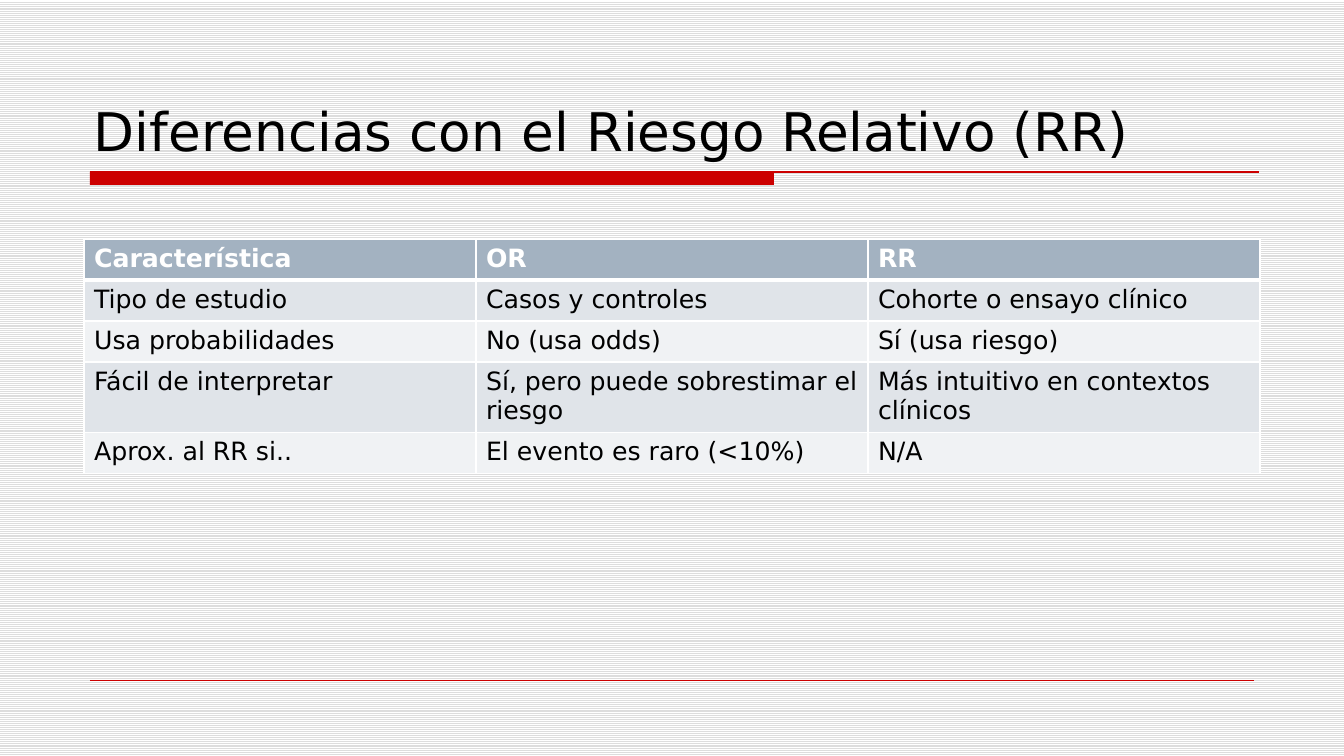
from lxml import etree
from pptx import Presentation, util as u
from pptx.dml.color import RGBColor
from pptx.enum import dml, shapes, text
from pptx.oxml import ns

PX = 914400 / 100.8  # EMU in one px
FONT = "DejaVu Sans"
BLACK = RGBColor(0x00, 0x00, 0x00)
WHITE = RGBColor(0xFF, 0xFF, 0xFF)
RED = RGBColor(0xCC, 0x00, 0x00)
STRIPE = RGBColor(0xDD, 0xDD, 0xDD)
HEADER = RGBColor(0xA3, 0xB2, 0xC1)
BANDS = [RGBColor(0xE0, 0xE4, 0xE9), RGBColor(0xF0, 0xF2, 0xF4)]

TITLE_FORMAT = {"name": FONT, "size": u.Pt(38)}
HEAD_FORMAT = {"name": FONT, "size": u.Pt(18), "bold": True}
BODY_FORMAT = {"name": FONT, "size": u.Pt(18), "bold": False}

ROWS = [
    ["Característica", "OR", "RR"],
    ["Tipo de estudio", "Casos y controles", "Cohorte o ensayo clínico"],
    ["Usa probabilidades", "No (usa odds)", "Sí (usa riesgo)"],
    ["Fácil de interpretar", "Sí, pero puede sobrestimar el riesgo",
     "Más intuitivo en contextos clínicos"],
    ["Aprox. al RR si..", "El evento es raro (<10%)", "N/A"],
]


def px(*values):
    return [u.Emu(round(v * PX)) for v in values]


def write(tf, content, color, formats):
    r = tf.paragraphs[0].add_run()
    r.text = content
    for name, value in formats.items():
        setattr(r.font, name, value)
    r.font.color.rgb = color


def set_background(s):
    fill = s.background.fill
    fill.patterned()
    fill.pattern = dml.MSO_PATTERN.LIGHT_HORIZONTAL
    fill.fore_color.rgb = STRIPE
    fill.back_color.rgb = WHITE


def add_title(s, content, *box):
    tf = s.shapes.add_textbox(*px(*box)).text_frame
    tf.word_wrap = True
    tf.vertical_anchor = text.MSO_ANCHOR.BOTTOM
    write(tf, content, BLACK, TITLE_FORMAT)


def add_bar(s, *box):
    sp = s.shapes.add_shape(shapes.MSO_SHAPE.RECTANGLE, *px(*box))
    sp.shadow.inherit = False
    sp.fill.solid()
    sp.fill.fore_color.rgb = RED
    sp.line.fill.background()


def add_rule(s, left, right, y, width):
    line = s.shapes.add_connector(shapes.MSO_CONNECTOR.STRAIGHT,
                                  *px(left, y, right, y))
    line.line.color.rgb = RED
    line.line.width = u.Pt(width)
    etree.SubElement(line._element.spPr, ns.qn("a:effectLst"))


def add_borders(cell, **widths):
    tc_pr = cell._tc.get_or_add_tcPr()
    for side in "LRTB":
        ln = etree.SubElement(tc_pr, ns.qn(f"a:ln{side}"),
                              w=str(u.Pt(widths.get(side, 1))))
        fill = etree.SubElement(ln, ns.qn("a:solidFill"))
        etree.SubElement(fill, ns.qn("a:srgbClr"), val=str(WHITE))


def add_comparison(s, rows, left, top, column_width, row_height):
    n_rows, n_cols = len(rows), len(rows[0])
    table = s.shapes.add_table(
        n_rows, n_cols,
        *px(left, top, column_width * n_cols, row_height * n_rows)).table
    for i, row in enumerate(rows):
        head = i == 0
        for j, content in enumerate(row):
            cell = table.cell(i, j)
            # The rule under the header is thicker
            add_borders(cell, T=3 if i == 1 else 1, B=3 if head else 1)
            cell.fill.solid()
            cell.fill.fore_color.rgb = HEADER if head else BANDS[(i - 1) % 2]
            write(cell.text_frame, content, WHITE if head else BLACK,
                  HEAD_FORMAT if head else BODY_FORMAT)


def main():
    prs = Presentation()
    prs.slide_width, prs.slide_height = px(1344, 756)
    s = prs.slides.add_slide(prs.slide_layouts[6])
    set_background(s)

    # Red rules under the title and at the foot
    add_bar(s, 90, 172, 684, 13)
    add_rule(s, 90, 1259, 172, 0.75)
    add_rule(s, 90, 1254, 680, 0.25)

    # Title and comparison table
    add_title(s, "Diferencias con el Riesgo Relativo (RR)", 84, 33, 1176, 134)
    add_comparison(s, ROWS, 84, 239, 392, 41)

    prs.save("out.pptx")


if __name__ == "__main__":
    main()
